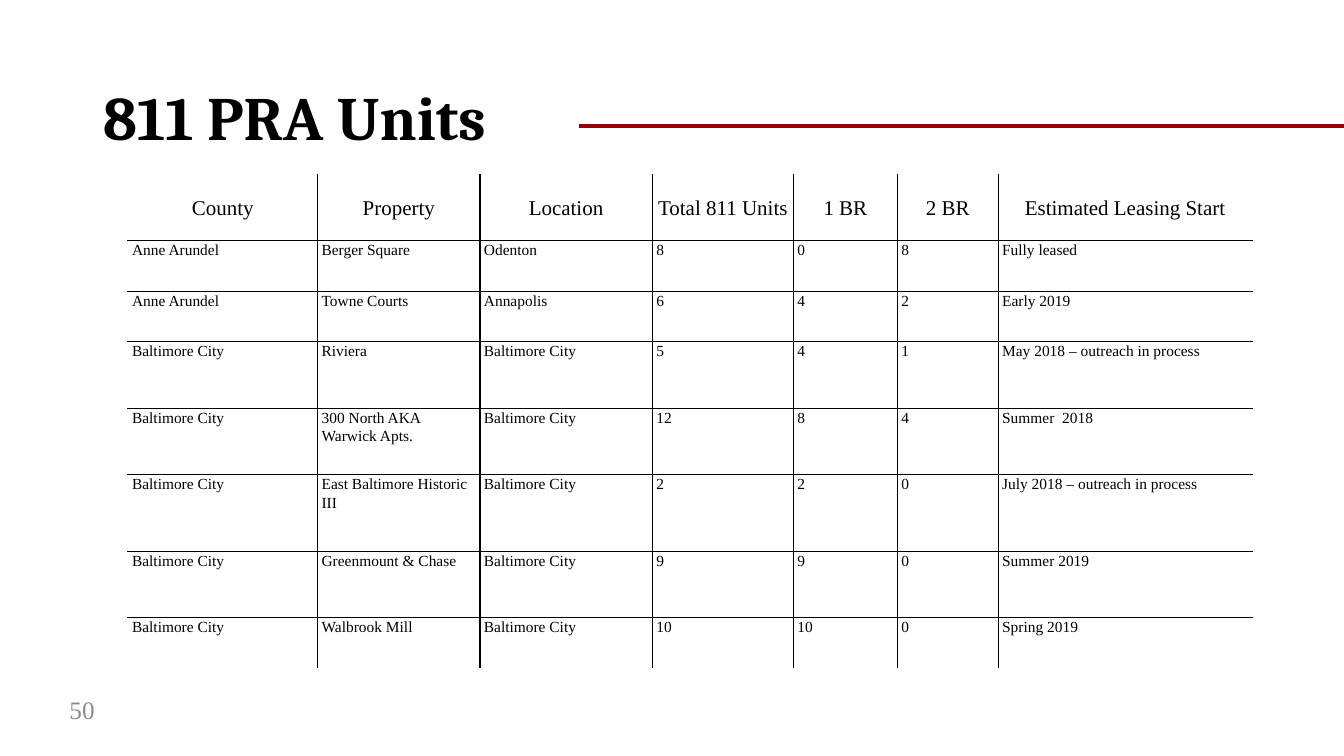
from dataclasses import dataclass

from lxml.etree import SubElement
from pptx import Presentation
from pptx.dml.color import RGBColor
from pptx.enum.shapes import MSO_CONNECTOR
from pptx.enum.text import MSO_ANCHOR, MSO_AUTO_SIZE, PP_ALIGN
from pptx.oxml.ns import qn
from pptx.util import Inches, Pt


@dataclass(frozen=True)
class Theme:
    """Colours, fonts and type sizes of the slide."""
    black: str = "000000"
    white: str = "FFFFFF"
    red: str = "980000"
    grey: str = "8C8C8C"
    heading_font: str = "Cambria"
    body_font: str = "Times New Roman"
    title_size: int = 44
    number_size: int = 18
    header_size: int = 15
    cell_size: int = 11


THEME = Theme()
COLUMN_WIDTHS = [1.88, 1.61, 1.71, 1.4, 1.03, 1, 2.52]
ROW_HEIGHTS = [0.66, 0.5, 0.5, 0.66, 0.66, 0.76, 0.66, 0.5]
UNITS = [
    ["County", "Property", "Location", "Total 811 Units", "1 BR", "2 BR", "Estimated Leasing Start"],
    ["Anne Arundel", "Berger Square", "Odenton", "8", "0", "8", "Fully leased"],
    ["Anne Arundel", "Towne Courts", "Annapolis", "6", "4", "2", "Early 2019"],
    ["Baltimore City", "Riviera", "Baltimore City", "5", "4", "1", "May 2018 – outreach in process"],
    ["Baltimore City", "300 North AKA Warwick Apts.", "Baltimore City", "12", "8", "4", "Summer  2018"],
    ["Baltimore City", "East Baltimore Historic III", "Baltimore City", "2", "2", "0",
     "July 2018 – outreach in process"],
    ["Baltimore City", "Greenmount & Chase", "Baltimore City", "9", "9", "0", "Summer 2019"],
    ["Baltimore City", "Walbrook Mill", "Baltimore City", "10", "10", "0", "Spring 2019"],
]


def apply_format(target, values):
    """Set every attribute named in values on the target."""
    for name, value in values.items():
        setattr(target, name, value)


def write_text(frame, text, size, font, color, bold=False, **paragraph_format):
    """Put one formatted paragraph in a text frame."""
    para = frame.paragraphs[0]
    apply_format(para, paragraph_format)
    span = para.add_run()
    span.text = text
    apply_format(span.font, {"size": Pt(size), "name": font, "bold": bold})
    span.font.color.rgb = RGBColor.from_string(color)


def add_title(page, box, text):
    """Place the title placeholder in the box."""
    title = page.shapes.title
    apply_format(title, dict(zip(("left", "top", "width", "height"), map(Inches, box))))
    apply_format(title.text_frame, {"vertical_anchor": MSO_ANCHOR.MIDDLE, "word_wrap": True,
                                    "auto_size": MSO_AUTO_SIZE.NONE})
    write_text(title.text_frame, text, THEME.title_size, THEME.heading_font, THEME.black,
               bold=True, alignment=PP_ALIGN.LEFT, line_spacing=0.9)


def add_page_number(page, box, text):
    """Place the page number in the box."""
    number = page.shapes.add_textbox(*map(Inches, box))
    apply_format(number.text_frame, {"vertical_anchor": MSO_ANCHOR.MIDDLE, "word_wrap": True})
    write_text(number.text_frame, text, THEME.number_size, THEME.body_font, THEME.grey)


def add_title_rule(page, box):
    """Draw the red rule from the box's left edge to its right edge."""
    left, top, width, height = box
    rule = page.shapes.add_connector(MSO_CONNECTOR.STRAIGHT, Inches(left), Inches(top),
                                     Inches(left + width), Inches(top + height))
    rule.line.color.rgb = RGBColor.from_string(THEME.red)
    rule.line.width = Pt(2.25)
    SubElement(rule._element.spPr, qn("a:effectLst"))


def set_borders(cell, on_edge):
    """Draw the cell's borders, white where the side lies on the table's edge."""
    properties = cell._tc.get_or_add_tcPr()
    for side, is_edge in on_edge.items():
        border = SubElement(properties, qn(f"a:ln{side}"), w=str(Pt(1)))
        fill = SubElement(border, qn("a:solidFill"))
        SubElement(fill, qn("a:srgbClr"), val=THEME.white if is_edge else THEME.black)


def format_cell(cell, text, is_header):
    """Write the text of a header or body cell."""
    apply_format(cell, {
        "margin_left": Inches(0.04), "margin_right": Inches(0.04),
        "margin_top": 0, "margin_bottom": 0,
        "vertical_anchor": MSO_ANCHOR.MIDDLE if is_header else MSO_ANCHOR.TOP,
    })
    cell.fill.background()
    write_text(cell.text_frame, text, THEME.header_size if is_header else THEME.cell_size,
               THEME.body_font, THEME.black, line_spacing=1.07, space_after=Pt(8),
               alignment=PP_ALIGN.CENTER if is_header else PP_ALIGN.LEFT)


def add_units_table(page, box, rows):
    """Build the table of units in the box."""
    table = page.shapes.add_table(len(rows), len(rows[0]), *map(Inches, box)).table
    apply_format(table, {"first_row": False, "horz_banding": False})
    for column, width in zip(table.columns, COLUMN_WIDTHS):
        column.width = Inches(width)
    for row, height in zip(table.rows, ROW_HEIGHTS):
        row.height = Inches(height)
    last_row, last_column = len(rows) - 1, len(rows[0]) - 1
    for i, texts in enumerate(rows):
        for j, text in enumerate(texts):
            cell = table.cell(i, j)
            set_borders(cell, {"L": j == 0, "R": j == last_column,
                               "T": i == 0, "B": i == last_row})
            format_cell(cell, text, is_header=i == 0)


def main():
    """Build the slide and save the deck."""
    deck = Presentation()
    apply_format(deck, {"slide_width": Inches(13.33), "slide_height": Inches(7.5)})
    page = deck.slides.add_slide(deck.slide_layouts.get_by_name("Title Only"))
    add_title(page, (0.92, 0.65, 11.5, 1.09), "811 PRA Units")
    add_page_number(page, (0.59, 6.84, 0.59, 0.4), "50")
    add_title_rule(page, (5.74, 1.25, 7.59, 0))
    add_units_table(page, (1.27, 1.73, sum(COLUMN_WIDTHS), sum(ROW_HEIGHTS)), UNITS)
    deck.save("out.pptx")


if __name__ == "__main__":
    main()
